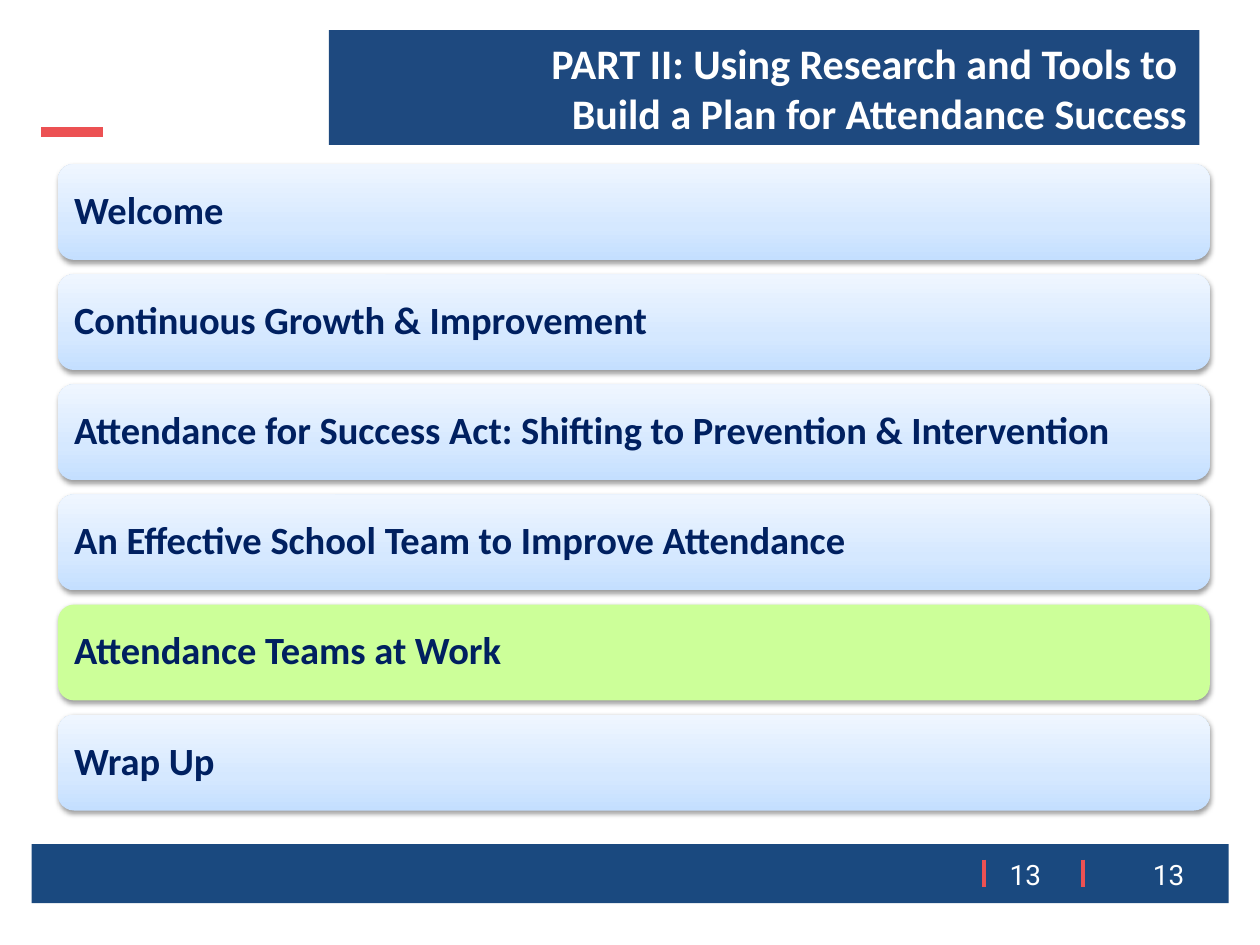
from typing import NamedTuple

from lxml.etree import SubElement
from pptx import Presentation
from pptx.dml.color import RGBColor
from pptx.enum.shapes import MSO_CONNECTOR, MSO_SHAPE
from pptx.enum.text import MSO_ANCHOR, PP_ALIGN
from pptx.oxml import parse_xml
from pptx.oxml.ns import nsdecls, qn
from pptx.util import Cm, Pt

COLORS = {
    "title": "1E497F",
    "footer": "1A497F",
    "accent": "EC5153",
    "white": "FFFFFF",
    "text": "002060",
    "highlight": "CCFF99",
}
BAR_GRADIENT = ((0, "C4DFFF"), (35, "D5E8FF"), (100, "EFF6FF"))


class AgendaItem(NamedTuple):
    label: str
    current: bool = False


class Rule(NamedTuple):
    """Straight accent line, in centimetres, with its width in points."""
    x1: float
    y1: float
    x2: float
    y2: float
    width: float


AGENDA = (
    AgendaItem("Welcome"),
    AgendaItem("Continuous Growth & Improvement"),
    AgendaItem("Attendance for Success Act: Shifting to Prevention & Intervention"),
    AgendaItem("An Effective School Team to Improve Attendance"),
    AgendaItem("Attendance Teams at Work", current=True),
    AgendaItem("Wrap Up"),
)
AGENDA_TOP, AGENDA_PITCH = 3.31, 2.22

TITLE_RULE = Rule(0.83, 2.66, 2.08, 2.66, 6)
FOOTER_RULES = [Rule(x, 17.33, x, 17.89, 2.25) for x in (19.84, 21.84)]
NUMBER_LEFTS = (19.87, 22.76)


def rgb(name: str) -> RGBColor:
    return RGBColor.from_string(COLORS[name])


def style_font(p, name: str, size: float, color: str, bold: bool = False) -> None:
    p.font.name = name
    p.font.size = Pt(size)
    p.font.bold = bold
    p.font.color.rgb = rgb(color)


def add_box(slide, kind, left: float, top: float, width: float, height: float, color: str):
    sp = slide.shapes.add_shape(kind, Cm(left), Cm(top), Cm(width), Cm(height))
    sp.shadow.inherit = False
    sp.fill.solid()
    sp.fill.fore_color.rgb = rgb(color)
    sp.line.fill.background()
    sp.text_frame.vertical_anchor = MSO_ANCHOR.MIDDLE
    return sp


def add_rule(slide, rule: Rule) -> None:
    line = slide.shapes.add_connector(
        MSO_CONNECTOR.STRAIGHT, Cm(rule.x1), Cm(rule.y1), Cm(rule.x2), Cm(rule.y2))
    line.line.color.rgb = rgb("accent")
    line.line.width = Pt(rule.width)
    SubElement(line._element.spPr, qn("a:effectLst"))


def set_bar_gradient(sp) -> None:
    """Replace the solid fill by the three-stop gradient, running upwards."""
    stops = "".join(
        f'<a:gs pos="{pos * 1000}"><a:srgbClr val="{color}"/></a:gs>'
        for pos, color in BAR_GRADIENT)
    solid = sp._element.spPr.find(qn("a:solidFill"))
    solid.getparent().replace(solid, parse_xml(
        f'<a:gradFill {nsdecls("a")} rotWithShape="1"><a:gsLst>{stops}</a:gsLst>'
        '<a:lin ang="16200000" scaled="0"/></a:gradFill>'))


def add_soft_shadow(sp) -> None:
    sp._element.spPr.find(qn("a:effectLst")).append(parse_xml(
        f'<a:outerShdw {nsdecls("a")} blurRad="40000" dist="20000" dir="5400000" '
        'rotWithShape="0"><a:srgbClr val="000000"><a:alpha val="38000"/></a:srgbClr>'
        '</a:outerShdw>'))


def add_agenda_bar(slide, item: AgendaItem, top: float) -> None:
    sp = add_box(slide, MSO_SHAPE.ROUNDED_RECTANGLE, 1.17, top, 23.22, 1.93, "highlight")
    if not item.current:
        set_bar_gradient(sp)
    add_soft_shadow(sp)
    tf = sp.text_frame
    tf.margin_left = tf.margin_right = tf.margin_top = tf.margin_bottom = Cm(0.23)
    p = tf.paragraphs[0]
    p.text = item.label
    p.alignment = PP_ALIGN.LEFT
    p.line_spacing = 0.9
    style_font(p, "Calibri", 22, "text", bold=True)


def add_title(slide, *lines: str) -> None:
    sp = add_box(slide, MSO_SHAPE.RECTANGLE, 6.63, 0.61, 17.55, 2.31, "title")
    tf = sp.text_frame
    for i, text in enumerate(lines):
        p = tf.add_paragraph() if i else tf.paragraphs[0]
        p.text = text
        p.alignment = PP_ALIGN.RIGHT
        style_font(p, "Calibri", 24, "white", bold=True)


def add_slide_number(slide, left: float) -> None:
    tf = slide.shapes.add_textbox(Cm(left), Cm(17.15), Cm(1.6), Cm(0.94)).text_frame
    tf.word_wrap = True
    tf.vertical_anchor = MSO_ANCHOR.MIDDLE
    p = tf.paragraphs[0]
    p.text = "13"
    p.alignment = PP_ALIGN.CENTER
    style_font(p, "Roboto", 16, "white")


def main() -> None:
    prs = Presentation()
    prs.slide_width, prs.slide_height = Cm(25.4), Cm(19.05)
    slide = prs.slides.add_slide(prs.slide_layouts[6])

    add_rule(slide, TITLE_RULE)
    add_title(slide, "PART II: Using Research and Tools to ",
              "Build a Plan for Attendance Success")
    for i, item in enumerate(AGENDA):
        add_agenda_bar(slide, item, AGENDA_TOP + i * AGENDA_PITCH)

    add_box(slide, MSO_SHAPE.RECTANGLE, 0.64, 17.02, 24.13, 1.19, "footer")
    for rule in FOOTER_RULES:
        add_rule(slide, rule)
    for left in NUMBER_LEFTS:
        add_slide_number(slide, left)

    prs.save("out.pptx")


if __name__ == "__main__":
    main()
